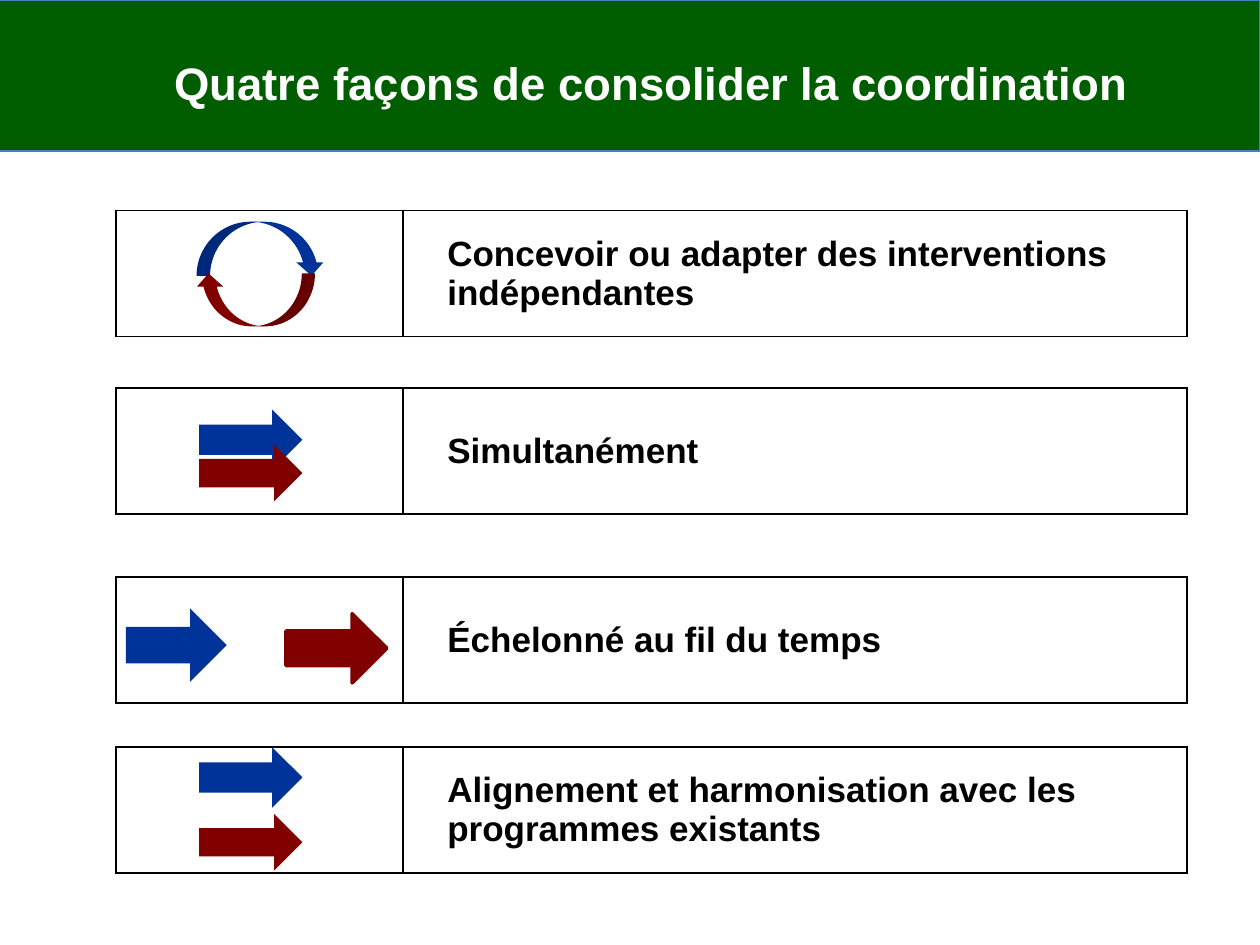
from lxml import etree
from pptx import Presentation
from pptx.dml.color import RGBColor
from pptx.enum.shapes import MSO_SHAPE
from pptx.enum.text import MSO_ANCHOR, PP_ALIGN
from pptx.oxml.ns import qn
from pptx.util import Inches, Pt

RECT = MSO_SHAPE.RECTANGLE
RIGHT = MSO_SHAPE.RIGHT_ARROW
CURVED = MSO_SHAPE.CURVED_DOWN_ARROW
MIDDLE = MSO_ANCHOR.MIDDLE
LEFT, CENTER = PP_ALIGN.LEFT, PP_ALIGN.CENTER

FONT = "Arial"
GREEN, BLUE, RED = "005D00", "003399", "800000"
BLACK, WHITE = "000000", "FFFFFF"
COLS = (2.28, 6.22)
ROWS = (
    (1.67, "Concevoir ou adapter des interventions indépendantes", 0.05),
    (3.08, "Simultanément", 0.05),
    (4.58, "Échelonné au fil du temps", 0.05),
    (5.93, "Alignement et harmonisation avec les programmes existants", 0.15),
)


def color(code):
    """Turn a hex string into a colour."""
    return RGBColor.from_string(code)


def write(frame, text, size=20, ink=BLACK, align=LEFT):
    """Put bold text in a text frame."""
    frame.word_wrap = True
    para = frame.paragraphs[0]
    para.alignment = align
    run = para.add_run()
    run.text = text
    run.font.name = FONT
    run.font.size = Pt(size)
    run.font.bold = True
    run.font.color.rgb = color(ink)


def add_form(shapes, kind, box, fill, line=None, width=0.75, turn=0):
    """Add a filled preset shape with an optional outline."""
    form = shapes.add_shape(kind, *map(Inches, box))
    form.shadow.inherit = False
    form.fill.solid()
    form.fill.fore_color.rgb = color(fill)
    form.rotation = turn
    if line:
        form.line.color.rgb = color(line)
        form.line.width = Pt(width)
    else:
        form.line.fill.background()


def set_border(cell):
    """Draw a thin black line on each side of a cell."""
    props = cell._tc.get_or_add_tcPr()
    for spot, side in enumerate(("a:lnL", "a:lnR", "a:lnT", "a:lnB")):
        line = etree.Element(qn(side), w=str(Pt(1)))
        fill = etree.SubElement(line, qn("a:solidFill"))
        etree.SubElement(fill, qn("a:srgbClr"), val=BLACK)
        props.insert(spot, line)


def add_row(shapes, top, text, pad):
    """Add a one-row table with a blank icon cell and a label cell."""
    box = map(Inches, (0.92, top, sum(COLS), 1))
    table = shapes.add_table(1, 2, *box).table
    table.first_row = table.horz_banding = False
    for col, width in zip(table.columns, COLS):
        col.width = Inches(width)
    for cell in table.iter_cells():
        cell.fill.background()
        set_border(cell)
    label = table.cell(0, 1)
    label.vertical_anchor = MIDDLE
    label.margin_left = Inches(0.35)
    label.margin_right = Inches(max(pad, 0.1))
    label.margin_top = label.margin_bottom = Inches(pad)
    write(label.text_frame, text)


def add_title(shapes, text):
    """Add the title over the banner."""
    box = shapes.add_textbox(*map(Inches, (0.67, 0.03, 9, 1.25)))
    box.text_frame.vertical_anchor = MIDDLE
    write(box.text_frame, text, size=26, ink=WHITE, align=CENTER)


def add_cycle(shapes):
    """Add two curved arrows that form a circle."""
    add_form(shapes, CURVED, (1.56, 1.76, 1.02, 0.43), BLUE)
    add_form(shapes, CURVED, (1.55, 2.17, 0.95, 0.42), RED, turn=180)


def add_stack(shapes, top, step):
    """Add a blue arrow above a red one."""
    add_form(shapes, RIGHT, (1.58, top, 0.82, 0.48), BLUE)
    add_form(shapes, RIGHT, (1.58, top + step, 0.82, 0.45), RED)


def add_series(shapes):
    """Add a blue arrow followed by a red one."""
    add_form(shapes, RIGHT, (2.27, 4.87, 0.8, 0.55), RED, line=RED, width=2)
    add_form(shapes, RIGHT, (1, 4.83, 0.8, 0.58), BLUE)


def main():
    """Build the slide and save it."""
    deck = Presentation()
    deck.slide_width, deck.slide_height = Inches(10), Inches(7.5)
    shapes = deck.slides.add_slide(deck.slide_layouts[6]).shapes
    add_form(shapes, RECT, (-0.02, 0, 10.02, 1.2), GREEN, line="4B7EBC")
    add_title(shapes, "Quatre façons de consolider la coordination")
    for row in ROWS:
        add_row(shapes, *row)
    add_cycle(shapes.add_group_shape().shapes)
    add_stack(shapes.add_group_shape().shapes, 3.25, 0.28)
    add_series(shapes.add_group_shape().shapes)
    add_stack(shapes, 5.93, 0.53)
    deck.save("out.pptx")


if __name__ == "__main__":
    main()
